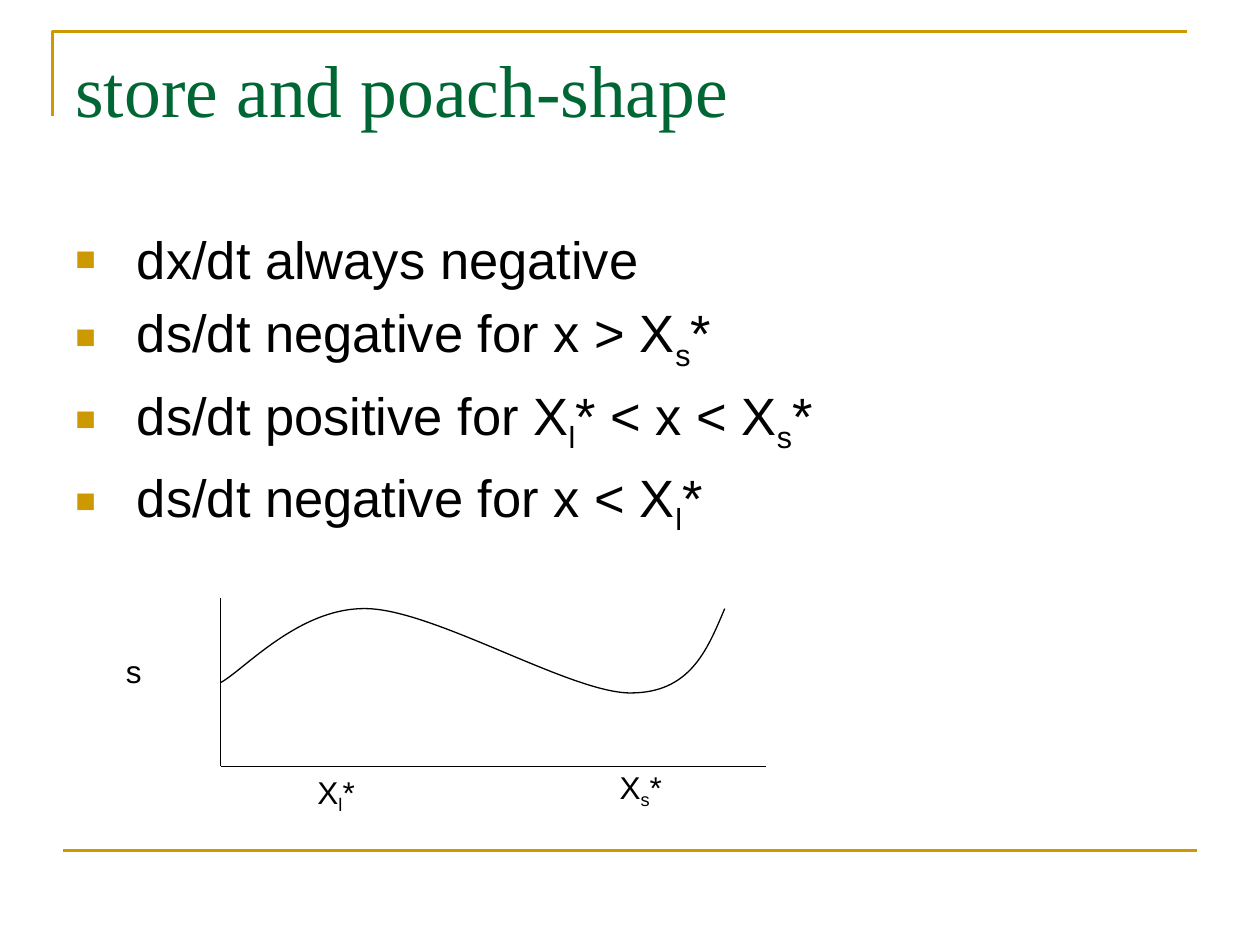
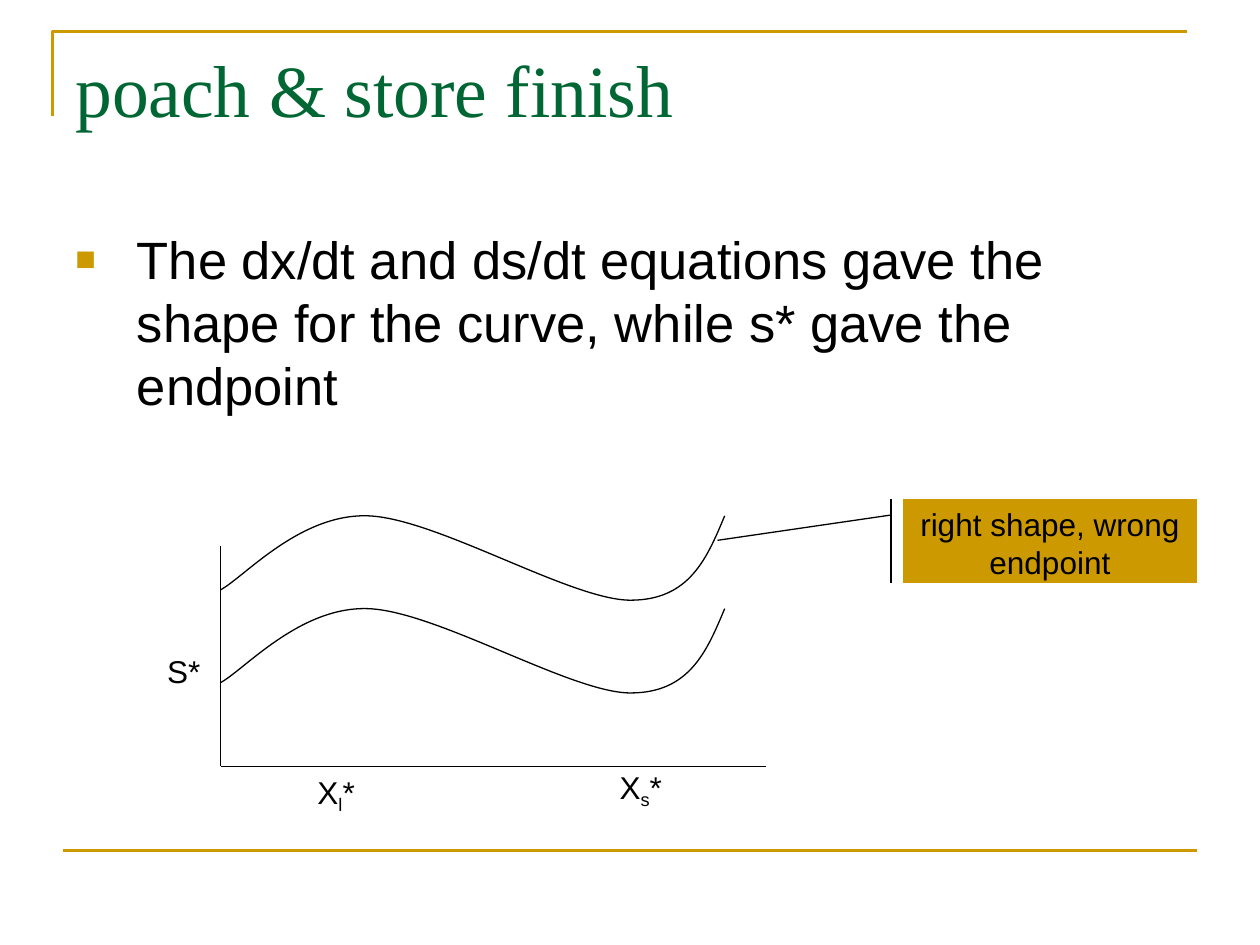
from lxml.etree import SubElement
from pptx import Presentation
from pptx.dml.color import RGBColor
from pptx.enum.shapes import MSO_CONNECTOR, MSO_SHAPE
from pptx.enum.text import MSO_ANCHOR, MSO_AUTO_SIZE, PP_ALIGN
from pptx.oxml.ns import qn
from pptx.util import Cm, Pt

GOLD, GREEN, BLACK = "CC9900", "006633", "000000"
SERIF, SANS = "Times New Roman", "Arial"
AXIS_LEFT, AXIS_RIGHT, AXIS_BOTTOM = 4.45, 15.45, 15.45
CURVE_LEFT, CURVE_TOP = 4.45, 12.25
CURVE = [(10.16, 0.02), (9.8, 0.88), (9.45, 1.72), (8.26, 1.72),
         (7.06, 1.72), (4.34, 0.06), (2.96, 0.02),
         (1.59, -0.02), (0.48, 1.25), (0, 1.51)]


def color(hex_string):
    return RGBColor.from_string(hex_string)


def style_line(line, hex_string, points):
    line.color.rgb = color(hex_string)
    line.width = Pt(points)


def add_line(slide, start, end, hex_string=BLACK, points=0.75):
    line = slide.shapes.add_connector(
        MSO_CONNECTOR.STRAIGHT, *[Cm(v) for v in (*start, *end)])
    style_line(line.line, hex_string, points)
    SubElement(line._element.spPr, qn("a:effectLst"))


def add_outline(slide, points, hex_string=BLACK, weight=0.75):
    corners = [(Cm(x), Cm(y)) for x, y in points]
    builder = slide.shapes.build_freeform(*corners[0], scale=1.0)
    builder.add_line_segments(corners[1:], close=False)
    outline = builder.convert_to_shape()
    outline.shadow.inherit = False
    outline.fill.background()
    style_line(outline.line, hex_string, weight)
    return outline


def add_curve(slide, top):
    curve = add_outline(slide, [(CURVE_LEFT + x, top + y) for x, y in CURVE])
    segments = list(curve._element.iter(qn("a:lnTo")))
    for first in range(0, len(segments), 3):
        bend = segments[first].makeelement(qn("a:cubicBezTo"))
        segments[first].addprevious(bend)
        for segment in segments[first:first + 3]:
            bend.append(segment[0])
            segment.getparent().remove(segment)


def write_runs(paragraph, parts, size, font=SANS, hex_string=BLACK):
    for index, part in enumerate(parts):
        run = paragraph.add_run()
        run.text = part
        run.font.size = Pt(size)
        run.font.name = font
        run.font.color.rgb = color(hex_string)
        if index % 2:
            run.font._element.set("baseline", "-25000")


def add_text_frame(slide, left, top, width, height):
    box = slide.shapes.add_textbox(Cm(left), Cm(top), Cm(width), Cm(height))
    box.text_frame.word_wrap = True
    return box.text_frame


def add_title(slide, title):
    frame = add_text_frame(slide, 1.27, 0.76, 22.86, 3.18)
    write_runs(frame.paragraphs[0], [title], 42, SERIF, GREEN)


def add_bullets(slide, bullets):
    frame = add_text_frame(slide, 1.27, 4.45, 22.86, 12.57)
    for index, parts in enumerate(bullets):
        paragraph = frame.add_paragraph() if index else frame.paragraphs[0]
        paragraph.space_before = Pt(6)
        write_runs(paragraph, parts, 30)
        properties = paragraph._p.get_or_add_pPr()
        properties.set("marL", str(Cm(1.24)))
        properties.set("indent", str(Cm(-1.24)))
        bullet_color = SubElement(properties, qn("a:buClr"))
        SubElement(bullet_color, qn("a:srgbClr"), val=GOLD)
        SubElement(properties, qn("a:buSzPct"), val="65000")
        SubElement(properties, qn("a:buFont"), typeface=SANS)
        SubElement(properties, qn("a:buChar"), char="■")


def add_label(slide, parts, left, top, width):
    frame = add_text_frame(slide, left, top, width, 1.02)
    frame.word_wrap = False
    frame.auto_size = MSO_AUTO_SIZE.SHAPE_TO_FIT_TEXT
    write_runs(frame.paragraphs[0], parts, 18)


def add_graph(slide, axis_top, curve_tops):
    origin = (AXIS_LEFT, AXIS_BOTTOM)
    add_line(slide, (AXIS_LEFT, axis_top), origin)
    add_line(slide, origin, (AXIS_RIGHT, AXIS_BOTTOM))
    for top in curve_tops:
        add_curve(slide, top)
    add_label(slide, ["X", "s", "*"], 12.24, 15.35, 1.4)
    add_label(slide, ["X", "l", "*"], 6.15, 15.45, 1.27)


def add_callout(slide, remark):
    callout = slide.shapes.add_shape(
        MSO_SHAPE.LINE_CALLOUT_1_ACCENT_BAR,
        Cm(18.2), Cm(10.06), Cm(5.93), Cm(1.7))
    for index, value in enumerate((0.19, -0.04, 0.49, -0.63)):
        callout.adjustments[index] = value
    callout.shadow.inherit = False
    callout.fill.solid()
    callout.fill.fore_color.rgb = color(GOLD)
    style_line(callout.line, BLACK, 0.75)
    frame = callout.text_frame
    frame.word_wrap = True
    frame.vertical_anchor = MSO_ANCHOR.TOP
    frame.paragraphs[0].alignment = PP_ALIGN.CENTER
    write_runs(frame.paragraphs[0], [remark], 18)


def add_page(deck, title, bullets):
    slide = deck.slides.add_slide(deck.slide_layouts[6])
    add_outline(slide, [(1.06, 2.33), (1.06, 0.64), (23.92, 0.64)], GOLD, 1.5)
    add_line(slide, (1.27, 17.15), (24.13, 17.15), GOLD, 1.5)
    add_title(slide, title)
    add_bullets(slide, bullets)
    return slide


def main():
    deck = Presentation()
    deck.slide_width, deck.slide_height = Cm(25.4), Cm(19.05)

    shape_page = add_page(deck, "store and poach-shape", [
        ["dx/dt always negative"],
        ["ds/dt negative for x > X", "s", "*"],
        ["ds/dt positive for X", "l", "* < x < X", "s", "*"],
        ["ds/dt negative for x < X", "l", "*"],
    ])
    add_graph(shape_page, 12.06, [CURVE_TOP])
    add_label(shape_page, ["s"], 2.29, 13.02, 0.84)

    finish_page = add_page(deck, "poach & store finish", [
        ["The dx/dt and ds/dt equations gave the shape for the curve, "
         "while s* gave the endpoint"],
    ])
    add_graph(finish_page, 11.01, [CURVE_TOP, CURVE_TOP - 1.87])
    add_label(finish_page, ["S*"], 3.12, 13.02, 1.19)
    add_callout(finish_page, "right shape, wrong endpoint")

    deck.save("out.pptx")


if __name__ == "__main__":
    main()
